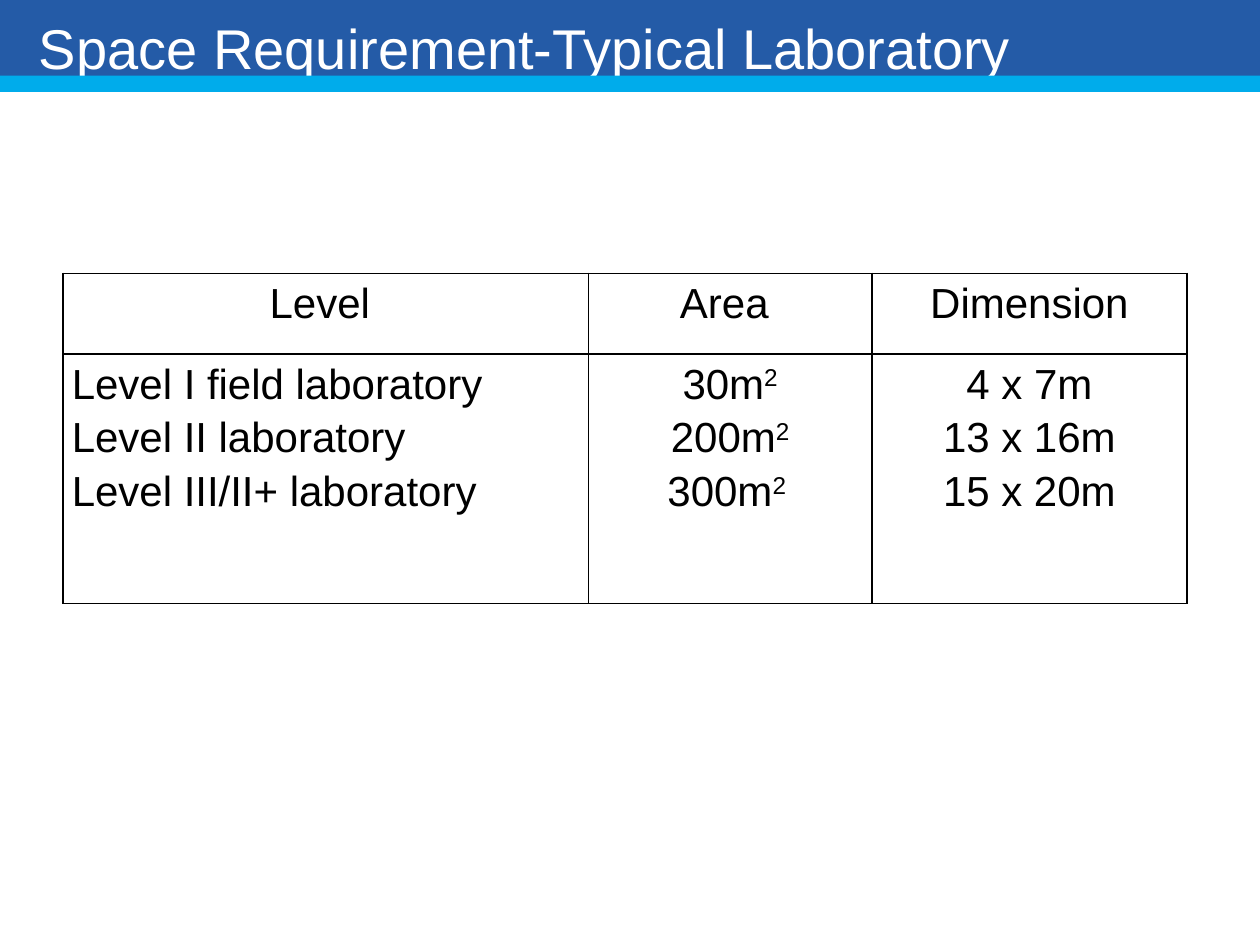
from dataclasses import dataclass

from lxml import etree
from pptx import Presentation
from pptx.dml.color import RGBColor
from pptx.enum.shapes import MSO_SHAPE
from pptx.enum.text import MSO_ANCHOR, PP_ALIGN
from pptx.oxml.ns import qn
from pptx.util import Inches, Pt

RECTANGLE = MSO_SHAPE.RECTANGLE
LEFT, CENTER = PP_ALIGN.LEFT, PP_ALIGN.CENTER
TOP, BOTTOM = MSO_ANCHOR.TOP, MSO_ANCHOR.BOTTOM

TITLE = "Space Requirement-Typical Laboratory"
# Each cell is a list of lines; each line is (text, superscript).
HEADER = [[("Level ", "")], [("Area ", "")], [("Dimension", "")]]
LEVELS = [("Level I field laboratory", ""), ("Level II laboratory", ""),
          ("Level III/II+ laboratory", "")]
AREAS = [("30m", "2"), ("200m", "2"), ("300m", "2 ")]
DIMENSIONS = [("4 x 7m", ""), ("13 x 16m", ""), ("15 x 20m", "")]
ROWS = [HEADER, [LEVELS, AREAS, DIMENSIONS]]

SLIDE_SIZE = (10, 7.5)
BANNER = (0, -0.04, 10, 0.68)
STRIPE = (0, 0.6, 10, 0.13)
TITLE_INDENT = 0.31
TABLE_ORIGIN = (0.5, 2.17)
COLUMN_WIDTHS = (4.17, 2.25, 2.5)
ROW_HEIGHTS = (0.64, 1.98)
CELL_MARGIN = 0.07


@dataclass(frozen=True)
class Theme:
    font: str = "Arial"
    title_size: int = 32
    table_size: int = 24
    line_spacing: float = 1.15
    border_width: int = 1
    banner: str = "245BA7"
    stripe: str = "00ACEB"
    paper: str = "FFFFFF"
    ink: str = "000000"


THEME = Theme()


def style(paragraph, size, color):
    paragraph.font.name = THEME.font
    paragraph.font.size = Pt(size)
    paragraph.font.color.rgb = RGBColor.from_string(color)


def add_band(slide, box, color):
    band = slide.shapes.add_shape(RECTANGLE, *map(Inches, box))
    band.shadow.inherit = False
    band.fill.solid()
    band.fill.fore_color.rgb = RGBColor.from_string(color)
    band.line.fill.background()
    return band


def add_title(banner):
    frame = banner.text_frame
    frame.word_wrap = True
    frame.vertical_anchor = BOTTOM
    frame.margin_left = Inches(TITLE_INDENT)
    frame.margin_right = frame.margin_top = frame.margin_bottom = 0
    paragraph = frame.paragraphs[0]
    paragraph.text = TITLE
    paragraph.alignment = LEFT
    style(paragraph, THEME.title_size, THEME.paper)


def set_borders(cell):
    properties = cell._tc.get_or_add_tcPr()
    for position, side in enumerate(("a:lnL", "a:lnR", "a:lnT", "a:lnB")):
        line = etree.Element(qn(side), w=str(Pt(THEME.border_width)))
        fill = etree.SubElement(line, qn("a:solidFill"))
        etree.SubElement(fill, qn("a:srgbClr"), val=THEME.ink)
        properties.insert(position, line)


def fill_cell(cell, lines, alignment):
    cell.margin_left = cell.margin_right = Inches(CELL_MARGIN)
    cell.margin_top = cell.margin_bottom = 0
    cell.vertical_anchor = TOP
    cell.fill.solid()
    cell.fill.fore_color.rgb = RGBColor.from_string(THEME.paper)
    set_borders(cell)
    frame = cell.text_frame
    for index, (text, superscript) in enumerate(lines):
        paragraph = frame.add_paragraph() if index else frame.paragraphs[0]
        paragraph.alignment = alignment
        paragraph.line_spacing = THEME.line_spacing
        style(paragraph, THEME.table_size, THEME.ink)
        paragraph.add_run().text = text
        if superscript:
            raised = paragraph.add_run()
            raised.text = superscript
            raised._r.get_or_add_rPr().set("baseline", "30000")


def add_space_table(slide):
    extent = (sum(COLUMN_WIDTHS), sum(ROW_HEIGHTS))
    table = slide.shapes.add_table(len(ROWS), len(COLUMN_WIDTHS),
                                   *map(Inches, TABLE_ORIGIN + extent)).table
    table.first_row = table.horz_banding = False
    for column, width in zip(table.columns, COLUMN_WIDTHS):
        column.width = Inches(width)
    for row, height in zip(table.rows, ROW_HEIGHTS):
        row.height = Inches(height)
    for r, cells in enumerate(ROWS):
        for c, lines in enumerate(cells):
            fill_cell(table.cell(r, c), lines, LEFT if lines is LEVELS else CENTER)


def main():
    deck = Presentation()
    deck.slide_width, deck.slide_height = map(Inches, SLIDE_SIZE)
    slide = deck.slides.add_slide(deck.slide_layouts[6])
    add_title(add_band(slide, BANNER, THEME.banner))
    add_band(slide, STRIPE, THEME.stripe)
    add_space_table(slide)
    deck.save("out.pptx")


if __name__ == "__main__":
    main()
